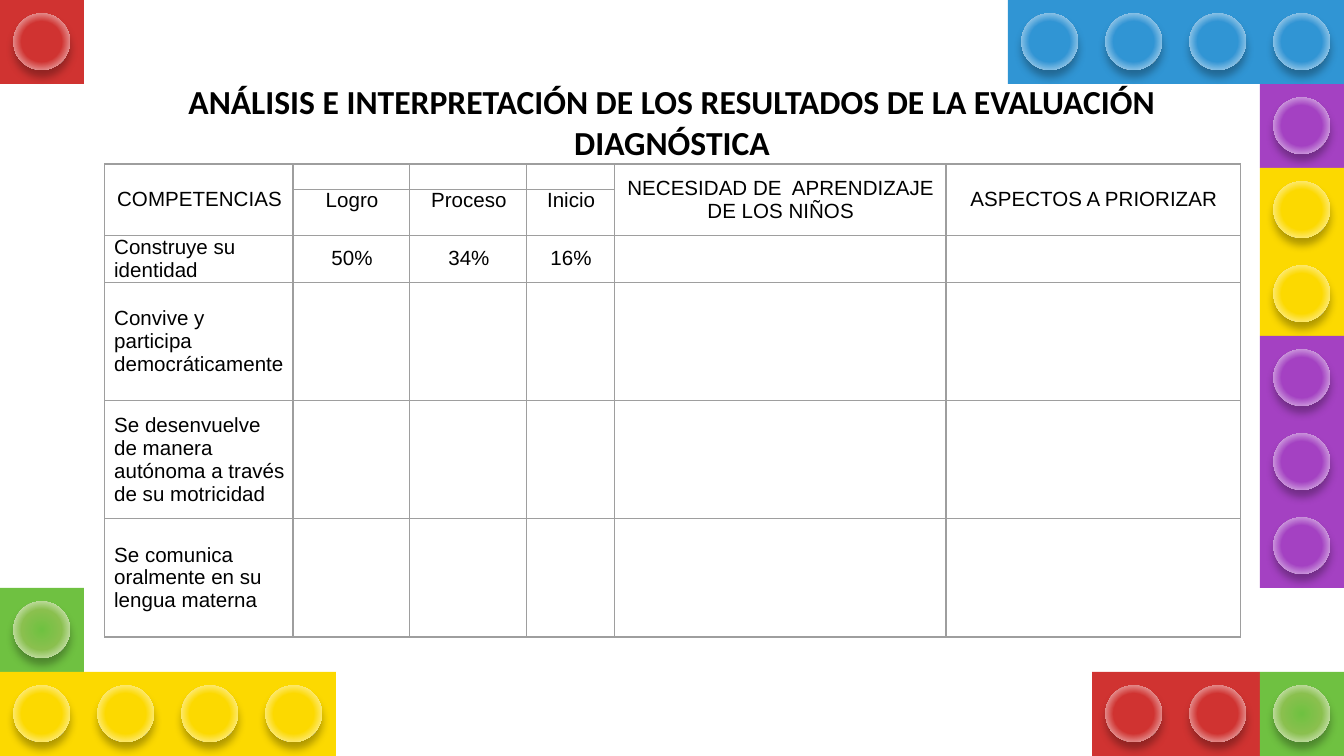
"""Build the slide with the diagnostic evaluation table framed by toy bricks."""
from pptx import Presentation
from pptx import util as u
from pptx.dml.color import RGBColor
from pptx.enum import shapes, text
from pptx.oxml import parse_xml
from pptx.oxml.ns import nsdecls

RED = RGBColor(0xD0, 0x33, 0x31)
BLUE = RGBColor(0x30, 0x95, 0xD4)
PURPLE = RGBColor(0xA4, 0x41, 0xC2)
YELLOW = RGBColor(0xFC, 0xD9, 0x00)
GREEN = RGBColor(0x6F, 0xC1, 0x41)
BLACK = RGBColor(0, 0, 0)
GREY = RGBColor(0x9E, 0x9E, 0x9E)

UNIT = u.Inches(10) // 16
STUD = u.Inches(0.42)
INSET = u.Inches(0.1)


def write(frame, words, font="Arial", size=11, bold=False, align=text.PP_ALIGN.CENTER):
    para = frame.paragraphs[0]
    para.alignment = align
    span = para.add_run()
    span.text = words
    span.font.name = font
    span.font.size = u.Pt(size)
    span.font.bold = bold
    span.font.color.rgb = BLACK


def add_block(kind, left, top, width, height, color):
    block = page.shapes.add_shape(kind, left, top, width, height)
    block.shadow.inherit = False
    block.fill.solid()
    block.fill.fore_color.rgb = color
    block.line.fill.background()
    return block


deck = Presentation()
deck.slide_width = u.Inches(10)
deck.slide_height = UNIT * 9
page = deck.slides.add_slide(deck.slide_layouts[5])

bricks = [
    (RED, 13, 8, 2, 1),
    (PURPLE, 15, 1, 1, 1),
    (YELLOW, 15, 2, 1, 2),
    (PURPLE, 15, 4, 1, 3),
    (GREEN, 0, 7, 1, 1),
    (YELLOW, 0, 8, 4, 1),
    (BLUE, 12, 0, 4, 1),
    (RED, 0, 0, 1, 1),
    (GREEN, 15, 8, 1, 1),
]
for color, column, row, across, down in bricks:
    add_block(shapes.MSO_SHAPE.RECTANGLE, column * UNIT, row * UNIT,
              across * UNIT, down * UNIT, color)
    middle = "8AC04E" if color == GREEN else color
    for step in range(across * down):
        x = column + step % across
        y = row + step // across
        stud = add_block(shapes.MSO_SHAPE.OVAL, x * UNIT + INSET, y * UNIT + INSET,
                         STUD, STUD, color)
        properties = stud.element.spPr
        solid = properties.find("{*}solidFill")
        properties.replace(solid, parse_xml(
            f'<a:gradFill {nsdecls("a")}><a:gsLst>'
            f'<a:gs pos="0"><a:srgbClr val="{color}"/></a:gs>'
            f'<a:gs pos="50000"><a:srgbClr val="{middle}"/></a:gs>'
            '<a:gs pos="100000"><a:srgbClr val="FFFFFF"/></a:gs></a:gsLst>'
            '<a:path path="circle"><a:fillToRect l="50000" t="50000" r="50000" b="50000"/>'
            '</a:path></a:gradFill>'))
        properties.find("{*}effectLst").append(parse_xml(
            f'<a:outerShdw {nsdecls("a")} blurRad="{u.Pt(4.5)}" dist="{u.Pt(3.8)}" '
            'dir="5400000" algn="ctr" rotWithShape="0"><a:srgbClr val="000000">'
            '<a:alpha val="29000"/></a:srgbClr></a:outerShdw>'))

title = page.shapes.title
title.left, title.top = u.Inches(0.78), u.Inches(0.59)
title.width, title.height = u.Inches(8.44), u.Inches(0.63)
frame = title.text_frame
frame.word_wrap = True
frame.auto_size = text.MSO_AUTO_SIZE.NONE
frame.vertical_anchor = text.MSO_ANCHOR.MIDDLE
frame.margin_left = frame.margin_right = frame.margin_top = frame.margin_bottom = INSET
write(frame, "ANÁLISIS E INTERPRETACIÓN DE LOS RESULTADOS DE LA EVALUACIÓN DIAGNÓSTICA",
      font="Calibri", size=18, bold=True)

widths = [1.4, 0.87, 0.87, 0.65, 2.47, 2.19]
heights = [0.18, 0.34, 0.35, 0.88, 0.88, 0.88]
rows = [
    ["COMPETENCIAS", "", "", "", "NECESIDAD DE  APRENDIZAJE DE LOS NIÑOS", "ASPECTOS A PRIORIZAR"],
    ["", "Logro", "Proceso", "Inicio"],
    ["Construye su identidad", "50%", "34%", "16%"],
    ["Convive y participa democráticamente"],
    ["Se desenvuelve de manera autónoma a través de su motricidad"],
    ["Se comunica oralmente en su lengua materna"],
]
table = page.shapes.add_table(len(rows), len(widths), u.Inches(0.78), u.Inches(1.22),
                              u.Inches(sum(widths)), u.Inches(sum(heights))).table
table.first_row = False
table.horz_banding = False
for column, width in zip(table.columns, widths):
    column.width = u.Inches(width)
for row, height in zip(table.rows, heights):
    row.height = u.Inches(height)
for column in (0, 4, 5):
    table.cell(0, column).merge(table.cell(1, column))

for r, words in enumerate(rows):
    for c in range(len(widths)):
        cell = table.cell(r, c)
        cell.margin_left, cell.margin_right = u.Inches(0.07), u.Inches(0.06)
        cell.margin_top = cell.margin_bottom = 0
        cell.vertical_anchor = text.MSO_ANCHOR.TOP if r == 1 else text.MSO_ANCHOR.MIDDLE
        cell.fill.background()
        for place, side in enumerate(("lnL", "lnR", "lnT", "lnB")):
            cell._tc.tcPr.insert(place, parse_xml(
                f'<a:{side} {nsdecls("a")} w="{u.Pt(0.75)}"><a:solidFill>'
                f'<a:srgbClr val="{GREY}"/></a:solidFill></a:{side}>'))
        if c < len(words) and words[c]:
            is_label = c == 0 and r > 1
            write(cell.text_frame, words[c],
                  align=text.PP_ALIGN.LEFT if is_label else text.PP_ALIGN.CENTER)
        else:
            cell.text_frame.paragraphs[0]._p.append(
                parse_xml(f'<a:endParaRPr {nsdecls("a")} sz="1100"/>'))

deck.save("out.pptx")
